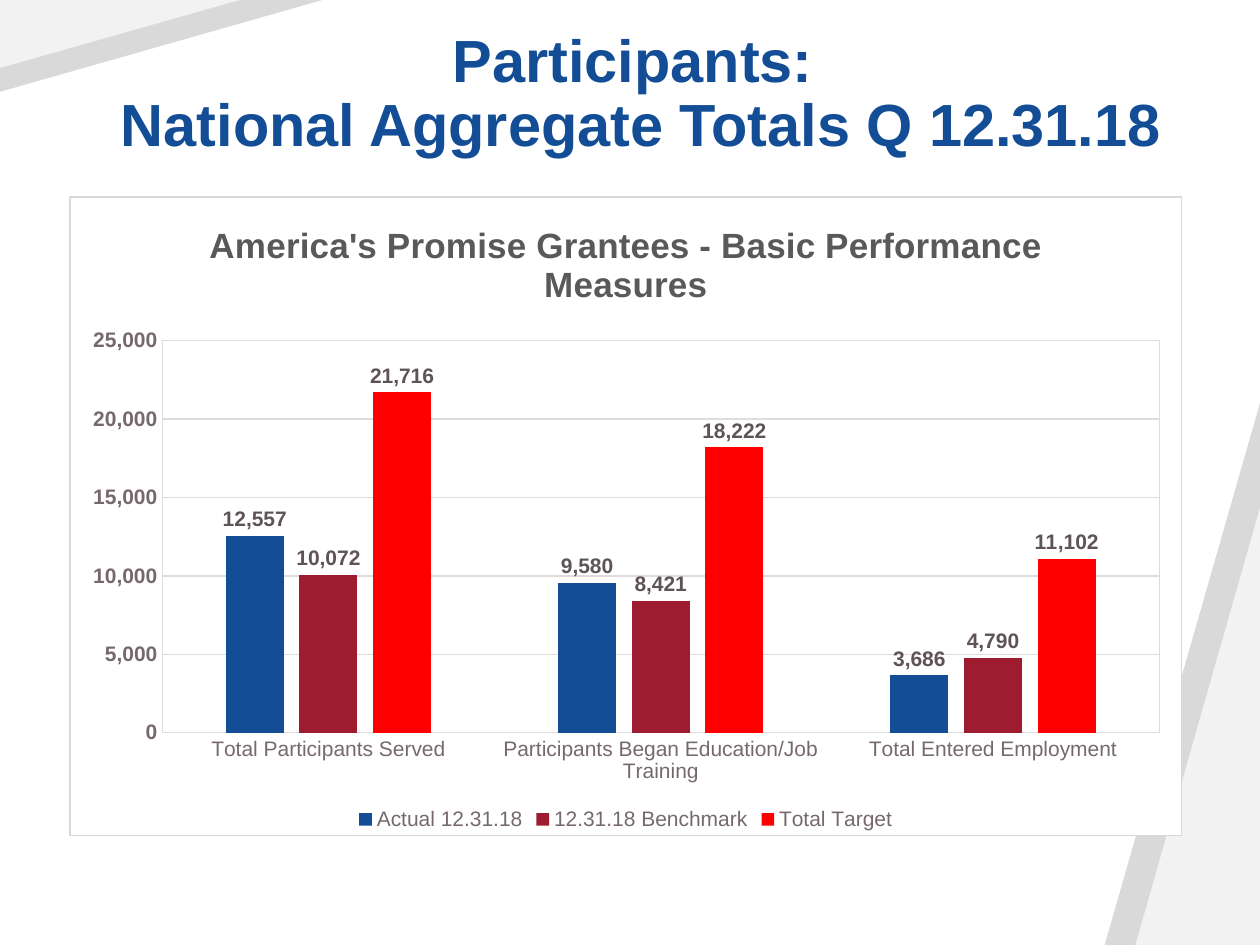
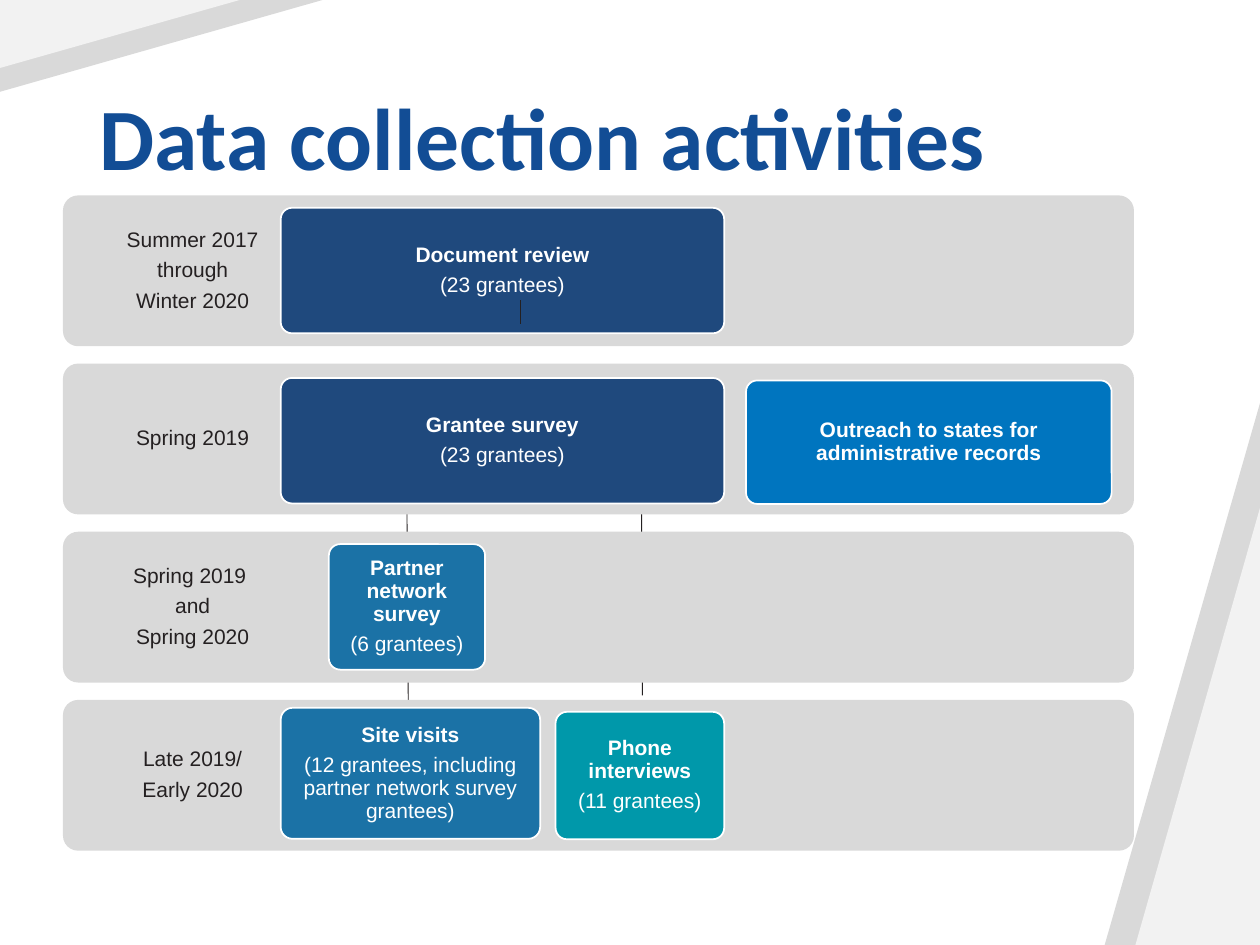
from lxml import etree
from pptx import Presentation
from pptx.chart.data import CategoryChartData
from pptx.dml.color import RGBColor
from pptx.enum.chart import XL_CHART_TYPE, XL_LABEL_POSITION, XL_LEGEND_POSITION, XL_TICK_MARK
from pptx.enum.shapes import MSO_CONNECTOR, MSO_SHAPE
from pptx.enum.text import MSO_ANCHOR, MSO_AUTO_SIZE, PP_ALIGN
from pptx.oxml import parse_xml
from pptx.oxml.ns import nsdecls, qn
from pptx.util import Cm, Pt

CLUSTERED = XL_CHART_TYPE.COLUMN_CLUSTERED
LABEL_OUTSIDE = XL_LABEL_POSITION.OUTSIDE_END
LEGEND_BOTTOM = XL_LEGEND_POSITION.BOTTOM
NO_TICK = XL_TICK_MARK.NONE
STRAIGHT = MSO_CONNECTOR.STRAIGHT
TRIANGLE, ROUNDED = MSO_SHAPE.ISOSCELES_TRIANGLE, MSO_SHAPE.ROUNDED_RECTANGLE
MIDDLE, BOTTOM = MSO_ANCHOR.MIDDLE, MSO_ANCHOR.BOTTOM
NO_AUTOFIT = MSO_AUTO_SIZE.NONE
LEFT, CENTER = PP_ALIGN.LEFT, PP_ALIGN.CENTER

COLORS = {
    "white": "FFFFFF", "ink": "242021", "title": "124D95",
    "grey": "D9D9D9", "pale": "F2F2F2",
    "navy": "1F497D", "steel": "1B72A6", "teal": "0098AA", "blue": "0075BF",
    "crimson": "9E1C30", "red": "FF0000",
    "chart_title": "595959", "axis": "76696C", "label": "5E5457", "grid": "E0DCDD",
}
FONT = "Arial"

# Timeline rows
BAND_LEFT, BAND_TOP, BAND_W, BAND_H, BAND_STEP = 1.27, 3.94, 21.59, 3.04, 3.39
BAND_LABELS = [
    ["Summer 2017", "through", "Winter 2020"],
    ["Spring 2019"],
    ["Spring 2019 ", "and", "Spring 2020"],
    ["Late 2019/", "Early 2020"],
]
# Activity cards: colour, box in cm, heading, detail
CARDS = [
    ("navy", (5.66, 4.19, 8.94, 2.53), "Document review", "(23 grantees)"),
    ("navy", (5.66, 7.62, 8.94, 2.53), "Grantee survey", "(23 grantees)"),
    ("steel", (5.66, 14.27, 5.23, 2.64), "Site visits",
     "(12 grantees, including partner network survey grantees)"),
    ("teal", (11.2, 14.35, 3.4, 2.57), "Phone interviews", "(11 grantees)"),
    ("steel", (6.63, 10.97, 3.15, 2.53), "Partner network survey", "(6 grantees)"),
    ("blue", (15.04, 7.67, 7.37, 2.49), "Outreach to states for administrative records", None),
]
LINKS = [(12.93, 9.42, 12.95, 14.02), (8.2, 9.58, 8.23, 14.17)]
REVIEW_MARK = (10.49, 6.05, 10.49, 6.53)

# Chart data
CATEGORIES = ["Total Participants Served", "Participants Began Education/Job Training",
              "Total Entered Employment"]
SERIES = [
    ("Actual 12.31.18", (12557, 9580, 3686), "title"),
    ("12.31.18 Benchmark", (10072, 8421, 4790), "crimson"),
    ("Total Target", (21716, 18222, 11102), "red"),
]
PLOT_LAYOUT = {"x": 0.083, "y": 0.225, "w": 0.897, "h": 0.614}


def rgb(name):
    return RGBColor.from_string(COLORS[name])


def style_font(font, size, color, bold=False, name=FONT):
    font.name, font.size, font.bold = name, Pt(size), bold
    font.color.rgb = rgb(color)


def add_run(p, text, size, color, bold=False, name=FONT):
    r = p.add_run()
    r.text = text
    style_font(r.font, size, color, bold, name)


def add_filled(slide, kind, box, fill, line=None):
    s = slide.shapes.add_shape(kind, *(Cm(v) for v in box))
    s.shadow.inherit = False
    s.fill.solid()
    s.fill.fore_color.rgb = rgb(fill)
    if line:
        s.line.color.rgb = rgb(line)
        s.line.width = Pt(1)
    else:
        s.line.fill.background()
    return s


def add_corners(slide, layout):
    """Draw the corner triangles and move them to the shared layout."""
    corners = [
        ("grey", (22.27, 8.13, 3.13, 10.92), 0),
        ("pale", (22.89, 10.24, 2.51, 8.81), 0),
        ("grey", (0, 0, 6.5, 1.85), 180),
        ("pale", (0, 0, 4.83, 1.37), 180),
    ]
    for position, (fill, box, turn) in enumerate(corners, start=2):
        s = add_filled(slide, TRIANGLE, box, fill)
        s.adjustments[0] = 1
        s.rotation = turn
        layout.shapes.element.insert(position, s.element)


def set_title(slide, lines, box, size, name, align, anchor):
    title = slide.shapes.title
    title.left, title.top, title.width, title.height = (Cm(v) for v in box)
    tf = title.text_frame
    tf.auto_size, tf.vertical_anchor, tf.word_wrap = NO_AUTOFIT, anchor, True
    p = tf.paragraphs[0]
    p.alignment, p.line_spacing = align, 0.9
    for i, line in enumerate(lines):
        if i:
            p.add_line_break()
        add_run(p, line, size, "title", True, name)


def fill_text(s, lines, color, margins):
    """Write centred paragraphs given as (text, bold)."""
    tf = s.text_frame
    tf.word_wrap, tf.vertical_anchor = True, MIDDLE
    tf.margin_left, tf.margin_top, tf.margin_right, tf.margin_bottom = (Cm(v) for v in margins)
    for i, (text, bold) in enumerate(lines):
        p = tf.add_paragraph() if i else tf.paragraphs[0]
        p.alignment, p.line_spacing, p.space_after = CENTER, 0.9, Pt(4.5)
        add_run(p, text, 12, color, bold)


def add_band(slide, row, labels):
    box = (BAND_LEFT, BAND_TOP + row * BAND_STEP, BAND_W, BAND_H)
    s = add_filled(slide, ROUNDED, box, "grey")
    s.adjustments[0] = 0.1
    fill_text(s, [(text, False) for text in labels], "ink", (0, 0.5, 16.36, 0.5))


def add_card(slide, fill, box, heading, detail):
    s = add_filled(slide, ROUNDED, box, fill, "white")
    s.adjustments[0] = 0.09
    lines = [(heading, True)] + ([(detail, False)] if detail else [])
    fill_text(s, lines, "white", (0.16,) * 4)


def add_link(slide, ends):
    s = slide.shapes.add_connector(STRAIGHT, *(Cm(v) for v in ends))
    s.line.color.rgb = rgb("ink")
    s.line.width = Pt(0.5)
    etree.SubElement(s.element.spPr, qn("a:effectLst"))


def area_style(line):
    """White fill and thin outline for a chart area."""
    return parse_xml(
        f'<c:spPr {nsdecls("c", "a")}><a:solidFill><a:srgbClr val="{COLORS["white"]}"/></a:solidFill>'
        f'<a:ln w="9525"><a:solidFill><a:srgbClr val="{COLORS[line]}"/></a:solidFill></a:ln></c:spPr>')


def style_areas(chart):
    space = chart.element
    space.find(qn("c:chart")).addnext(area_style("grey"))
    plot_area = space.find(qn("c:chart")).find(qn("c:plotArea"))
    plot_area.append(area_style("grid"))
    for old in plot_area.findall(qn("c:layout")):
        plot_area.remove(old)
    modes = "".join(f'<c:{k}Mode val="edge"/>' for k in "xy")
    sizes = "".join(f'<c:{k} val="{v}"/>' for k, v in PLOT_LAYOUT.items())
    plot_area.insert(0, parse_xml(
        f'<c:layout {nsdecls("c")}><c:manualLayout><c:layoutTarget val="inner"/>'
        f'{modes}{sizes}</c:manualLayout></c:layout>'))


def style_axes(chart):
    cat, val = chart.category_axis, chart.value_axis
    for axis, bold in ((cat, False), (val, True)):
        axis.major_tick_mark = axis.minor_tick_mark = NO_TICK
        style_font(axis.tick_labels.font, 12, "axis", bold)
    val.minimum_scale, val.maximum_scale, val.major_unit = 0, 25000, 5000
    val.tick_labels.number_format = "#,##0"
    val.tick_labels.number_format_is_linked = False
    val.format.line.fill.background()
    val.has_major_gridlines = True
    for line in (cat.format.line, val.major_gridlines.format.line):
        line.color.rgb = rgb("grid")
        line.width = Pt(0.75)


def add_column_chart(slide, title, box):
    data = CategoryChartData(number_format="#,##0")
    data.categories = CATEGORIES
    for name, values, _ in SERIES:
        data.add_series(name, values)
    chart = slide.shapes.add_chart(CLUSTERED, *(Cm(v) for v in box), data).chart
    style_font(chart.font, 10, "ink")
    chart.has_title = True
    add_run(chart.chart_title.text_frame.paragraphs[0], title, 20, "chart_title", True)
    chart.chart_title.include_in_layout = False
    chart.has_legend = True
    chart.legend.position = LEGEND_BOTTOM
    chart.legend.include_in_layout = False
    style_font(chart.legend.font, 12, "axis")

    plot = chart.plots[0]
    plot.gap_width, plot.overlap, plot.vary_by_categories = 219, -27, False
    for series, (_, _, color) in zip(plot.series, SERIES):
        series.format.fill.solid()
        series.format.fill.fore_color.rgb = rgb(color)
        labels = series.data_labels
        labels.show_value, labels.position = True, LABEL_OUTSIDE
        labels.number_format, labels.number_format_is_linked = "#,##0", False
        style_font(labels.font, 12, "label", True)
    style_axes(chart)
    style_areas(chart)


def main():
    prs = Presentation()
    prs.slide_width, prs.slide_height = Cm(25.4), Cm(19.05)
    layout = prs.slide_layouts[5]

    # Participant totals
    totals = prs.slides.add_slide(layout)
    add_corners(totals, layout)
    set_title(totals, ["Participants: ", "National Aggregate Totals Q 12.31.18"],
              (0.86, 0.46, 24.13, 2.92), 34, FONT, CENTER, MIDDLE)
    add_column_chart(totals, "America's Promise Grantees - Basic Performance Measures",
                     (1.4, 3.96, 22.43, 12.9))

    # Data collection timeline
    timeline = prs.slides.add_slide(layout)
    set_title(timeline, ["Data collection activities"],
              (1.75, 1.02, 22.1, 2.92), 50, "Calibri", LEFT, BOTTOM)
    for ends in LINKS:
        add_link(timeline, ends)
    for row, labels in enumerate(BAND_LABELS):
        add_band(timeline, row, labels)
    for card in CARDS:
        add_card(timeline, *card)
    add_link(timeline, REVIEW_MARK)

    prs.save("out.pptx")


if __name__ == "__main__":
    main()
